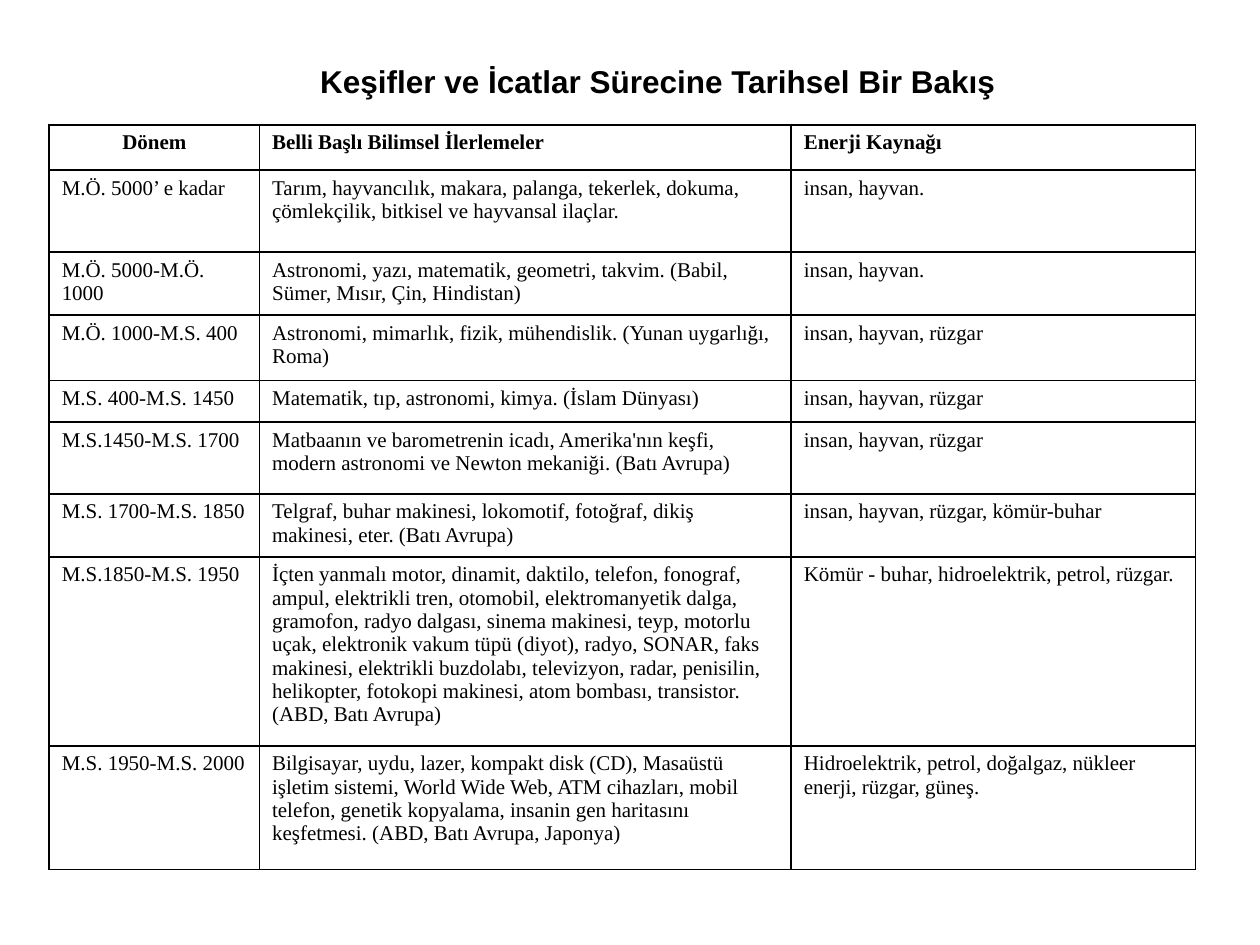
from lxml import etree
from pptx import Presentation
from pptx.dml.color import RGBColor
from pptx.enum.text import MSO_ANCHOR, PP_ALIGN
from pptx.oxml.ns import qn
from pptx.util import Inches, Pt

CENTER, LEFT = PP_ALIGN.CENTER, PP_ALIGN.LEFT
MIDDLE, TOP = MSO_ANCHOR.MIDDLE, MSO_ANCHOR.TOP
TITLE_ONLY = 5

COLORS = {"ink": "000000", "paper": "FFFFFF"}
TITLE_FONT = {"name": "Arial", "size": Pt(18), "bold": True}
HEADER_FONT = {"name": "Times New Roman", "size": Pt(12), "bold": True}
BODY_FONT = {**HEADER_FONT, "bold": False}

TITLE = "Keşifler ve İcatlar Sürecine Tarihsel Bir Bakış"
COLUMN_WIDTHS = [1.67, 4.22, 3.21]
ROW_HEIGHTS = [0.36, 0.65, 0.5, 0.52, 0.33, 0.57, 0.5, 1.5, 0.98]
PERIODS = [
    ("Dönem", "Belli Başlı Bilimsel İlerlemeler", "Enerji Kaynağı"),
    ("M.Ö. 5000’ e kadar",
     "Tarım, hayvancılık, makara, palanga, tekerlek, dokuma, "
     "çömlekçilik, bitkisel ve hayvansal ilaçlar.",
     "insan, hayvan."),
    ("M.Ö. 5000-M.Ö. 1000",
     "Astronomi, yazı, matematik, geometri, takvim. "
     "(Babil, Sümer, Mısır, Çin, Hindistan)",
     "insan, hayvan."),
    ("M.Ö. 1000-M.S. 400",
     "Astronomi, mimarlık, fizik, mühendislik. (Yunan uygarlığı, Roma)",
     "insan, hayvan, rüzgar"),
    ("M.S. 400-M.S. 1450",
     "Matematik, tıp, astronomi, kimya. (İslam Dünyası)",
     "insan, hayvan, rüzgar"),
    ("M.S.1450-M.S. 1700",
     "Matbaanın ve barometrenin icadı, Amerika'nın keşfi, "
     "modern astronomi ve Newton mekaniği. (Batı Avrupa)",
     "insan, hayvan, rüzgar"),
    ("M.S. 1700-M.S. 1850",
     "Telgraf, buhar makinesi, lokomotif, fotoğraf, dikiş makinesi, "
     "eter. (Batı Avrupa)",
     "insan, hayvan, rüzgar, kömür-buhar"),
    ("M.S.1850-M.S. 1950",
     "İçten yanmalı motor, dinamit, daktilo, telefon, fonograf, ampul, "
     "elektrikli tren, otomobil, elektromanyetik dalga, gramofon, "
     "radyo dalgası, sinema makinesi, teyp, motorlu uçak, elektronik "
     "vakum tüpü (diyot), radyo, SONAR, faks makinesi, elektrikli "
     "buzdolabı, televizyon, radar, penisilin, helikopter, fotokopi "
     "makinesi, atom bombası, transistor. (ABD, Batı Avrupa)",
     "Kömür - buhar, hidroelektrik, petrol, rüzgar."),
    ("M.S. 1950-M.S. 2000",
     "Bilgisayar, uydu, lazer, kompakt disk (CD), Masaüstü işletim "
     "sistemi, World Wide Web, ATM cihazları, mobil telefon, genetik "
     "kopyalama, insanin gen haritasını keşfetmesi. "
     "(ABD, Batı Avrupa, Japonya)",
     "Hidroelektrik, petrol, doğalgaz, nükleer enerji, rüzgar, güneş."),
]


class HistorySlide:
    """Holds the style and the current slide, and adds its elements."""

    def __init__(self, presentation):
        self.slide = presentation.slides.add_slide(presentation.slide_layouts[TITLE_ONLY])
        background = self.slide.background.fill
        background.solid()
        background.fore_color.rgb = RGBColor.from_string(COLORS["paper"])

    def set_text(self, frame, text, font_values, alignment):
        frame.text = text
        paragraph = frame.paragraphs[0]
        paragraph.alignment = alignment
        font = paragraph.runs[0].font
        for attribute, value in font_values.items():
            setattr(font, attribute, value)
        font.color.rgb = RGBColor.from_string(COLORS["ink"])

    def title(self, text, left, top, width, height):
        heading = self.slide.shapes.title
        place = {"left": left, "top": top, "width": width, "height": height}
        for attribute, value in place.items():
            setattr(heading, attribute, Inches(value))
        frame = heading.text_frame
        frame.word_wrap = False
        frame.vertical_anchor = MIDDLE
        self.set_text(frame, text, TITLE_FONT, CENTER)

    def border(self, cell):
        properties = cell._tc.get_or_add_tcPr()
        for side in ("a:lnL", "a:lnR", "a:lnT", "a:lnB"):
            line = etree.SubElement(properties, qn(side), w=str(Pt(1)))
            fill = etree.SubElement(line, qn("a:solidFill"))
            etree.SubElement(fill, qn("a:srgbClr"), val=COLORS["ink"])

    def table(self, rows, left, top, widths, heights):
        grid = self.slide.shapes.add_table(
            len(rows), len(widths), Inches(left), Inches(top),
            Inches(sum(widths)), Inches(sum(heights))).table
        grid.horz_banding = False
        for column, width in zip(grid.columns, widths):
            column.width = Inches(width)
        for row, height in zip(grid.rows, heights):
            row.height = Inches(height)
        for row_index, texts in enumerate(rows):
            is_header = row_index == 0
            for column_index, text in enumerate(texts):
                cell = grid.cell(row_index, column_index)
                cell.vertical_anchor = TOP
                self.border(cell)
                cell.fill.background()
                self.set_text(cell.text_frame, text,
                              HEADER_FONT if is_header else BODY_FONT,
                              CENTER if is_header and column_index == 0 else LEFT)


def main():
    presentation = Presentation()
    presentation.slide_width = Inches(10)
    presentation.slide_height = Inches(7.5)
    history = HistorySlide(presentation)
    history.title(TITLE, 2.44, 0.44, 5.56, 0.4)
    history.table(PERIODS, 0.39, 0.99, COLUMN_WIDTHS, ROW_HEIGHTS)
    presentation.save("out.pptx")


if __name__ == "__main__":
    main()
